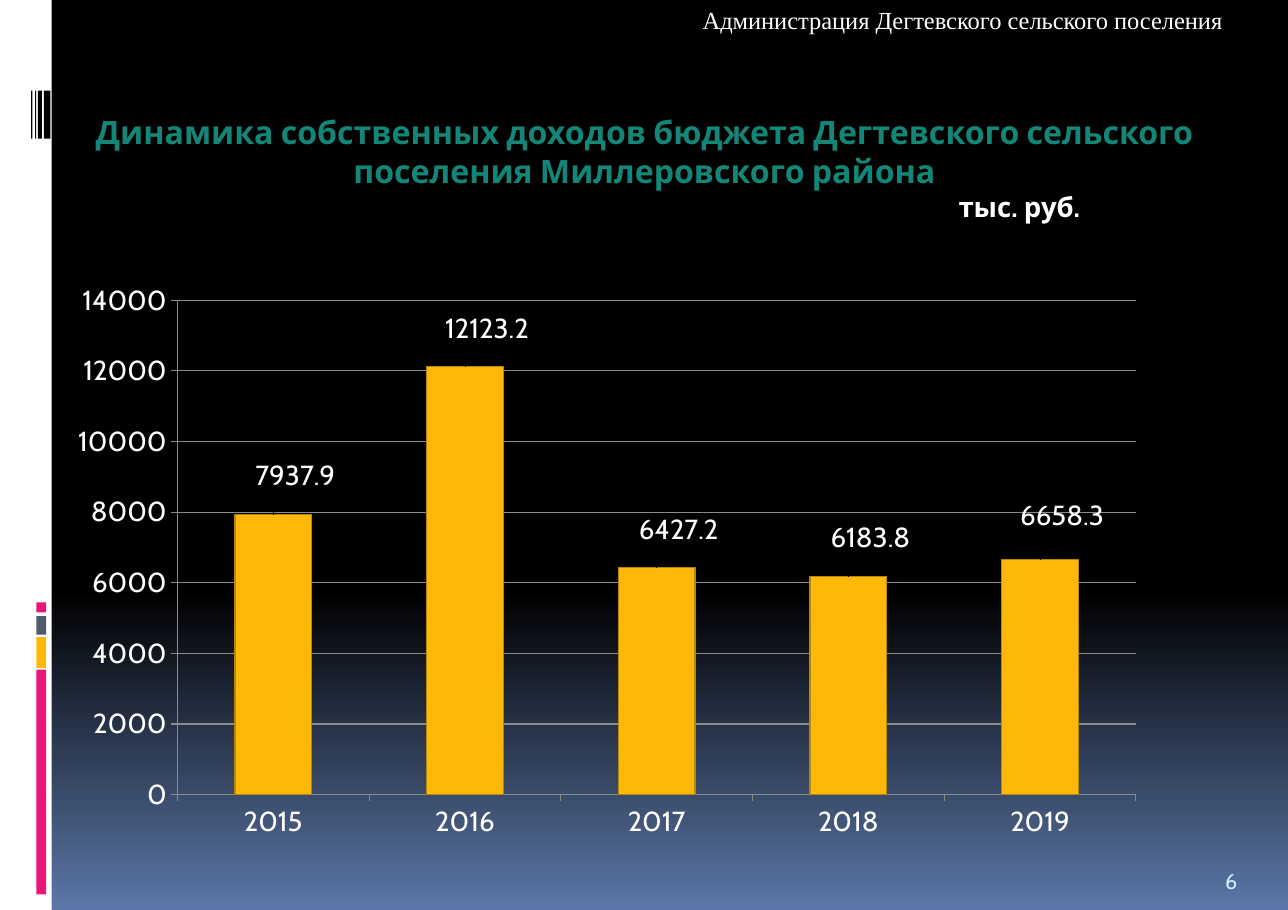
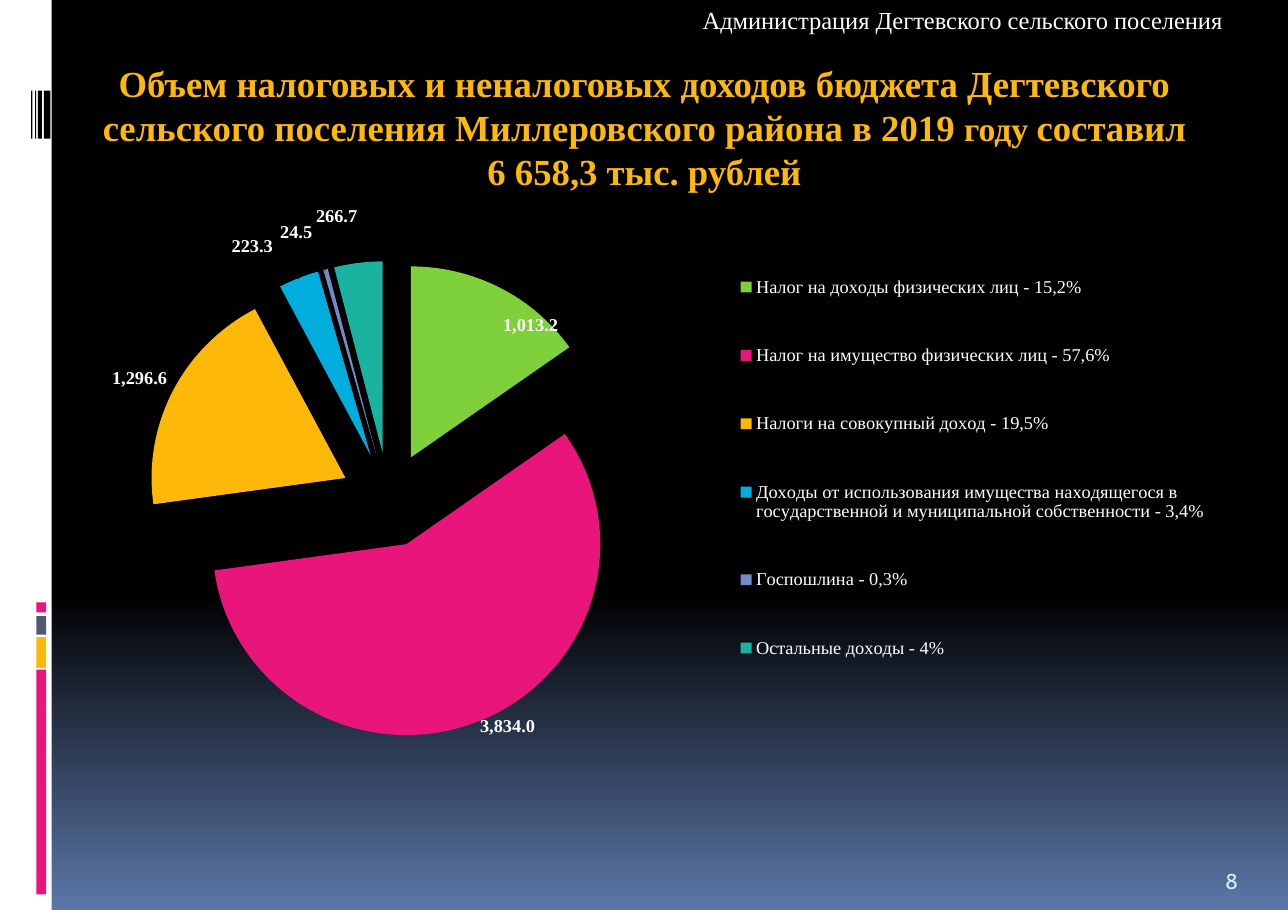
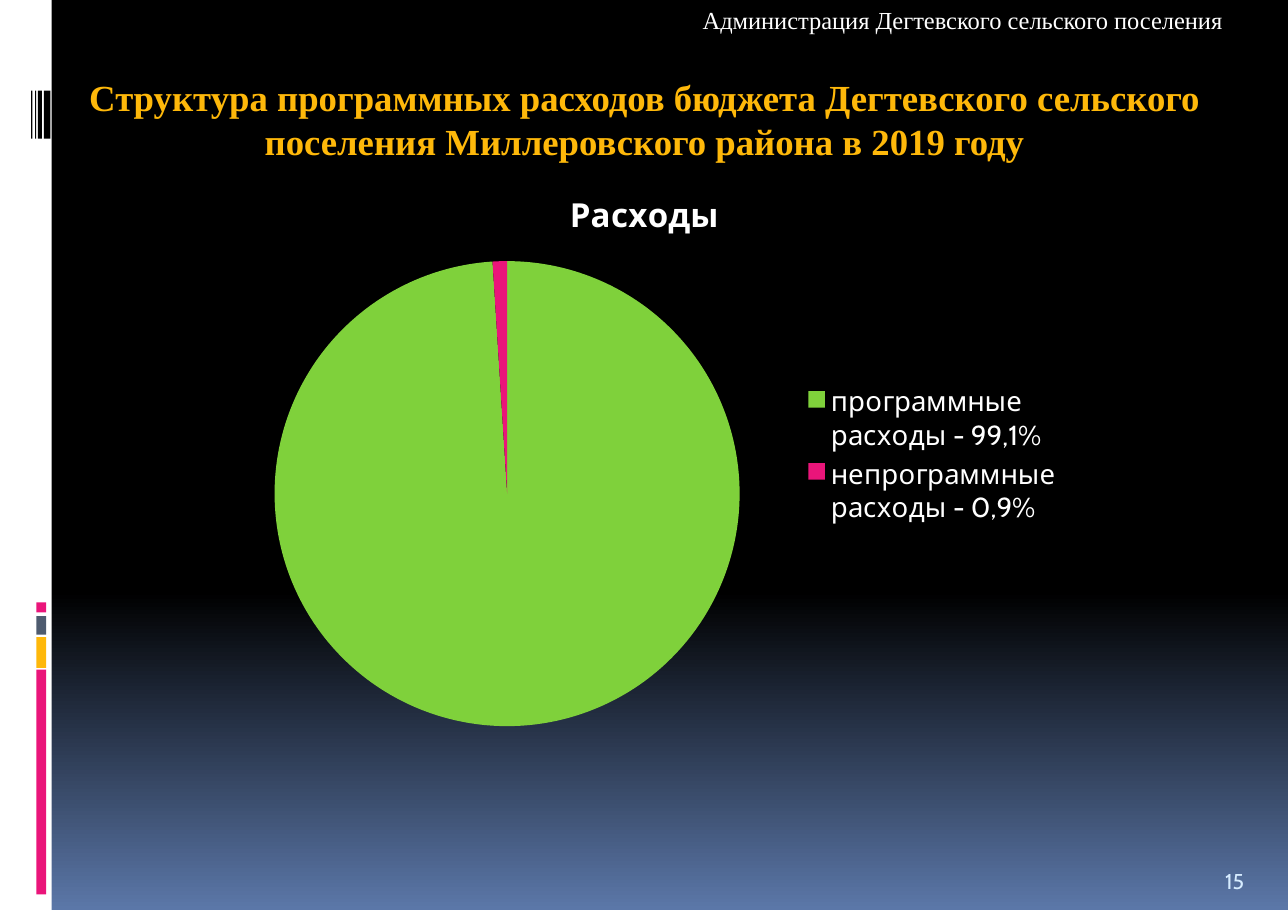
"""Builds three budget slides with a shared dark background, side stripe and charts."""
from copy import deepcopy

from pptx import Presentation
from pptx.chart.data import CategoryChartData
from pptx.dml.color import RGBColor
from pptx.enum.chart import XL_CHART_TYPE as CT, XL_LABEL_POSITION as LP
from pptx.enum.chart import XL_LEGEND_POSITION as LEG, XL_TICK_MARK as TICK
from pptx.enum.shapes import MSO_SHAPE
from pptx.enum.text import MSO_ANCHOR, PP_ALIGN
from pptx.oxml import parse_xml
from pptx.oxml.ns import nsdecls, qn
from pptx.util import Inches, Pt

BLACK = RGBColor(0x00, 0x00, 0x00)
WHITE = RGBColor(0xFF, 0xFF, 0xFF)
BLUE = RGBColor(0x5B, 0x77, 0xA8)
PINK = RGBColor(0xEA, 0x15, 0x7A)
AMBER = RGBColor(0xFE, 0xB8, 0x0A)
BROWN = RGBColor(0xB8, 0x85, 0x05)
SLATE = RGBColor(0x4E, 0x5B, 0x6F)
TEAL = RGBColor(0x13, 0x86, 0x77)
PALE = RGBColor(0xD6, 0xEC, 0xFF)
GREY = RGBColor(0x8B, 0x8B, 0x8B)
GREEN = RGBColor(0x7F, 0xD1, 0x3B)
CYAN = RGBColor(0x00, 0xAD, 0xDC)
PERIWINKLE = RGBColor(0x73, 0x8A, 0xC8)
SEA = RGBColor(0x1A, 0xB3, 0x9F)
CABIN, TIMES = "Cabin", "Times New Roman"

prs = Presentation()
prs.slide_width, prs.slide_height = Inches(11.69), Inches(8.26)
COL, ROW = prs.slide_width / 100, prs.slide_height / 100


def at(left, top, width, height):
    """Turns columns and rows of a 100 by 100 grid into lengths."""
    return int(left * COL), int(top * ROW), int(width * COL), int(height * ROW)


def style(font, size, name, color, bold=False):
    """Sets the look of a font."""
    font.size, font.name, font.bold = Pt(size), name, bold
    font.color.rgb = color


master = prs.slide_master
fill = master.background.fill
fill.gradient()
fill.gradient_angle = 270
stop_list = next(master.element.iter(qn("a:gsLst")))
stop_list.insert(1, deepcopy(stop_list[0]))
for stop, position, color in zip(fill.gradient_stops, (0, 0.65, 1), (BLACK, BLACK, BLUE)):
    stop.position, stop.color.rgb = position, color

PAGES = [
    (6, TEAL, CABIN, (5.13, 11.74, 89.82, 14.04),
     [("Динамика собственных доходов бюджета Дегтевского сельского поселения "
       "Миллеровского района", 21)]),
    (8, AMBER, TIMES, (6.06, 6.05, 87.94, 15.86),
     [("Объем налоговых и неналоговых доходов бюджета Дегтевского сельского поселения "
       "Миллеровского района в 2019 ", 24), ("году ", 22),
      ("составил 6 658,3 тыс. рублей", 24)]),
    (15, AMBER, TIMES, (5.13, 7.63, 89.82, 11.02),
     [("Структура программных расходов бюджета Дегтевского сельского поселения "
       "Миллеровского района в 2019 году", 24)]),
]
slides = []
for number, color, name, place, runs in PAGES:
    s = prs.slides.add_slide(prs.slide_layouts[5])
    slides.append(s)
    title = s.shapes.title
    title.left, title.top, title.width, title.height = at(*place)
    tf = title.text_frame
    tf.vertical_anchor, tf.word_wrap = MSO_ANCHOR.TOP, True
    p = tf.paragraphs[0]
    p.alignment = PP_ALIGN.CENTER
    for text, size in runs:
        r = p.add_run()
        r.text = text
        style(r.font, size, name, color, True)
    for text, place, size, name, color in [
        ("Администрация Дегтевского сельского поселения",
         (53.72, 0, 46.28, 4.48), 16, TIMES, WHITE),
        (str(number), (94.18, 93.58, 4.96, 5.33), 14, CABIN, PALE),
    ]:
        tf = s.shapes.add_textbox(*at(*place)).text_frame
        tf.word_wrap = True
        tf.text = text
        style(tf.paragraphs[0].runs[0].font, size, name, color)
    tf.vertical_anchor = MSO_ANCHOR.BOTTOM
    tf.margin_left = tf.margin_right = Inches(0.11)
    tf.margin_top = tf.margin_bottom = Inches(0.06)

STRIPES = [(0, 0, 4.02, 100, WHITE)]
STRIPES += [(2.82, top, 0.77, height, color) for top, height, color in [
    (73.6, 24.7, PINK), (70, 3.4, AMBER), (67.7, 2.05, SLATE), (66.2, 1.1, PINK)]]
STRIPES += [(left, 9.95, width, 5.3, BLACK) for left, width in [
    (3.42, 0.5), (2.95, 0.3), (2.72, 0.09), (2.41, 0.1)]]
for i, (*place, color) in enumerate(STRIPES):
    sp = slides[0].shapes.add_shape(MSO_SHAPE.RECTANGLE, *at(*place))
    sp.shadow.inherit = False
    sp.fill.solid()
    sp.fill.fore_color.rgb = color
    sp.line.fill.background()
    sp.element[0][0].set("id", str(100 + i))
    master.shapes.element.append(sp.element)

p = slides[0].shapes.title.text_frame.add_paragraph()
p.text = "тыс. руб."
p.alignment = PP_ALIGN.LEFT
p._p.get_or_add_pPr().set("marL", str(Inches(8)))
style(p.runs[0].font, 18, CABIN, WHITE, True)

CHARTS = [
    (CT.COLUMN_CLUSTERED, (4.36, 29.9, 85.54, 63.56), 18, "Series 1", "General",
     [("2015", 7937.9, AMBER), ("2016", 12123.2, AMBER), ("2017", 6427.2, AMBER),
      ("2018", 6183.8, AMBER), ("2019", 6658.3, AMBER)],
     (18, CABIN, False),
     [(0.02, -0.03), (0.02, -0.03), (0.02, -0.03), (0.02, -0.03), (0.02, -0.04)]),
    (CT.PIE, (5.13, 22.76, 90.25, 59.32), 10, "Series 1", "#,##0.0",
     [("Налог на доходы физических лиц - 15,2%", 1013.2, GREEN),
      ("Налог на имущество физических лиц - 57,6%", 3834, PINK),
      ("Налоги на совокупный доход - 19,5%", 1296.6, AMBER),
      ("Доходы от использования имущества находящегося в государственной "
       "и муниципальной собственности - 3,4%", 223.3, CYAN),
      ("Госпошлина - 0,3%", 24.5, PERIWINKLE),
      ("Остальные доходы - 4%", 266.7, SEA)],
     (12, TIMES, True),
     [(0, 0.1), (0, -0.02), (0, 0), (-0.02, -0.03), (-0.01, -0.04), (0, -0.06)]),
    (CT.PIE, (16.68, 18.52, 66.72, 62.95), 18, "Расходы", "General",
     [("программные расходы - 99,1%", 99, GREEN),
      ("непрограммные расходы - 0,9%", 1, PINK)], None, []),
]
LAYOUT = "<c:layout %s><c:manualLayout>%s</c:manualLayout></c:layout>"
charts = []
for s, (kind, place, size, name, fmt, rows, label, offsets) in zip(slides, CHARTS):
    data = CategoryChartData(number_format=fmt)
    data.categories = [row[0] for row in rows]
    data.add_series(name, [row[1] for row in rows])
    chart = s.shapes.add_chart(kind, *at(*place), data).chart
    charts.append(chart)
    style(chart.font, size, CABIN, WHITE)
    chart.has_title = False
    chart.has_legend = kind == CT.PIE
    plot = chart.plots[0]
    plot.vary_by_categories = kind == CT.PIE
    points = plot.series[0].points
    if kind == CT.PIE:
        chart.legend.position = LEG.RIGHT
        chart.legend.include_in_layout = False
        for i, row in enumerate(rows):
            points[i].format.fill.solid()
            points[i].format.fill.fore_color.rgb = row[2]
    if label:
        plot.has_data_labels = True
        labels = plot.data_labels
        labels.show_value, labels.show_percentage = True, False
        labels.number_format, labels.number_format_is_linked = fmt, False
        labels.position = LP.OUTSIDE_END
        style(labels.font, label[0], label[1], WHITE, label[2])
    for i in range(len(offsets)):
        points[i].data_label.position = LP.OUTSIDE_END
        style(points[i].data_label.font, label[0], label[1], WHITE, label[2])
    for d_lbl, (x, y) in zip(chart.element.iter(qn("c:dLbl")), offsets):
        d_lbl.insert(1, parse_xml(LAYOUT % (
            nsdecls("c"), f'<c:x val="{x}"/><c:y val="{y}"/>')))
        d_lbl.insert(2, parse_xml(
            f'<c:numFmt {nsdecls("c")} formatCode="{fmt}" sourceLinked="0"/>'))

bars, income, spending = charts
plot = bars.plots[0]
plot.gap_width = 150
bar_format = plot.series[0].format
bar_format.fill.solid()
bar_format.fill.fore_color.rgb = AMBER
bar_format.line.color.rgb, bar_format.line.width = BROWN, Pt(1)
bars.value_axis.maximum_scale, bars.value_axis.minimum_scale = 14000, 0
bars.value_axis.major_unit = 2000
for axis in (bars.category_axis, bars.value_axis):
    axis.major_tick_mark, axis.minor_tick_mark = TICK.OUTSIDE, TICK.NONE
    axis.format.line.color.rgb = GREY
bars.value_axis.major_gridlines.format.line.color.rgb = GREY

style(income.legend.font, 12, TIMES, WHITE)
first_point = next(income.element.iter(qn("c:dPt")))
first_point.addprevious(parse_xml(f'<c:explosion {nsdecls("c")} val="25"/>'))
area = next(income.element.iter(qn("c:plotArea")))
for old in area.findall(qn("c:layout")):
    area.remove(old)
legend = next(income.element.iter(qn("c:legend")))
for parent, index, inner, frame in [
    (area, 0, '<c:layoutTarget val="inner"/>', (0.069, 0.101, 0.417, 0.899)),
    (legend, 1, "", (0.57, 0.04, 0.42, 0.9)),
]:
    for old in parent.findall(qn("c:layout")):
        parent.remove(old)
    modes = '<c:xMode val="edge"/><c:yMode val="edge"/>'
    sizes = "".join(f'<c:{side} val="{share}"/>' for side, share in zip("xywh", frame))
    parent.insert(index, parse_xml(LAYOUT % (nsdecls("c"), inner + modes + sizes)))

spending.has_title = True
tf = spending.chart_title.text_frame
tf.text = "Расходы"
style(tf.paragraphs[0].runs[0].font, 21.6, CABIN, WHITE, True)
style(spending.legend.font, 18, CABIN, WHITE)

prs.save("out.pptx")
